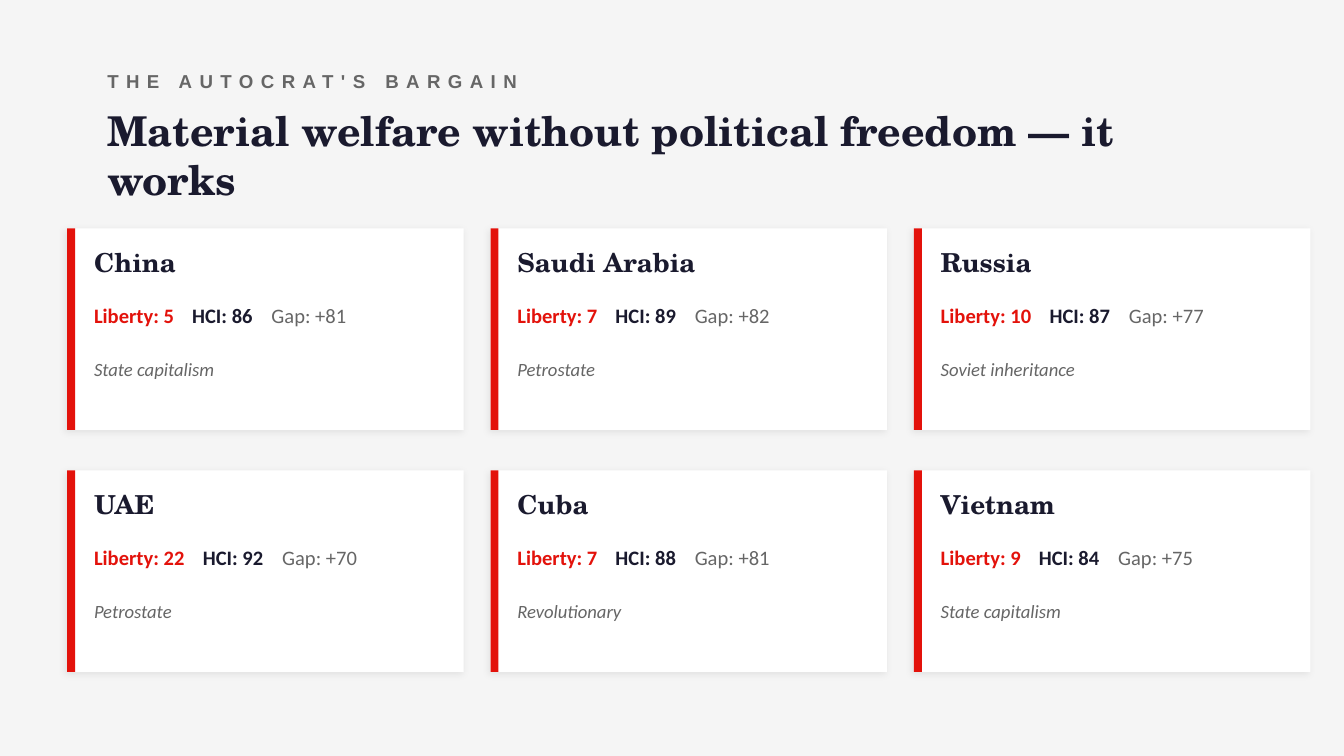
from typing import NamedTuple

from lxml import etree
from pptx import Presentation
from pptx.dml.color import RGBColor
from pptx.enum.shapes import MSO_SHAPE
from pptx.enum.text import MSO_ANCHOR
from pptx.oxml.ns import qn
from pptx.shapes.autoshape import Shape
from pptx.slide import Slide
from pptx.util import Inches, Pt

RECT = MSO_SHAPE.RECTANGLE
MIDDLE = MSO_ANCHOR.MIDDLE

COLORS = {
    "back": "F5F5F5",
    "card": "FFFFFF",
    "red": "E3120B",
    "navy": "1A1A2E",
    "gray": "666666",
    "shadow": "000000",
}
SERIF, SANS = "TeX Gyre Schola", "Calibri"
STYLES = {
    "label": ("gray", {"name": "Arial", "size": Pt(10), "bold": True}),
    "title": ("navy", {"name": SERIF, "size": Pt(22), "bold": True}),
    "nation": ("navy", {"name": SERIF, "size": Pt(14), "bold": True}),
    "liberty": ("red", {"name": SANS, "size": Pt(11), "bold": True}),
    "index": ("navy", {"name": SANS, "size": Pt(11), "bold": True}),
    "gap": ("gray", {"name": SANS, "size": Pt(11), "bold": False}),
    "model": ("gray", {"name": SANS, "size": Pt(10), "italic": True}),
}
MARGINS = ("margin_left", "margin_top", "margin_right", "margin_bottom")
WIDTH = Inches(10)
HEIGHT = WIDTH * 9 // 16
COLS = 3
LEFT, TOP = 0.5, 1.7
STEP_X, STEP_Y = 3.15, 1.8
CARD_W, CARD_H, BAR_W = 2.95, 1.5, 0.06


class Box(NamedTuple):
    left: float
    top: float
    width: float
    height: float


class Card(NamedTuple):
    nation: str
    liberty: int
    index: int
    model: str


CARDS = [
    Card("China", 5, 86, "State capitalism"),
    Card("Saudi Arabia", 7, 89, "Petrostate"),
    Card("Russia", 10, 87, "Soviet inheritance"),
    Card("UAE", 22, 92, "Petrostate"),
    Card("Cuba", 7, 88, "Revolutionary"),
    Card("Vietnam", 9, 84, "State capitalism"),
]


def color(name: str) -> RGBColor:
    return RGBColor.from_string(COLORS[name])


def add_rect(slide: Slide, box: Box, fill: str) -> Shape:
    shape = slide.shapes.add_shape(RECT, *map(Inches, box))
    shape.shadow.inherit = False
    shape.fill.solid()
    shape.fill.fore_color.rgb = color(fill)
    shape.line.fill.background()
    return shape


def add_shadow(shape: Shape) -> None:
    effects = shape._element.spPr.find(qn("a:effectLst"))
    outer = etree.SubElement(effects, qn("a:outerShdw"), blurRad=str(Pt(4)),
                             dist=str(Pt(1.5)), dir=str(135 * 60000),
                             algn="bl", rotWithShape="0")
    tint = etree.SubElement(outer, qn("a:srgbClr"), val=COLORS["shadow"])
    etree.SubElement(tint, qn("a:alpha"), val="8000")


def add_text(slide: Slide, box: Box, runs: list[tuple[str, str]],
             inset: bool = False, tabs: tuple[float, ...] = (),
             spacing: int = 0) -> None:
    frame = slide.shapes.add_textbox(*map(Inches, box)).text_frame
    frame.word_wrap = True
    frame.vertical_anchor = MIDDLE
    if not inset:
        for side in MARGINS:
            setattr(frame, side, 0)
    para = frame.paragraphs[0]
    if tabs:
        stops = etree.SubElement(para._p.get_or_add_pPr(), qn("a:tabLst"))
        for tab in tabs:
            etree.SubElement(stops, qn("a:tab"), pos=str(Inches(tab)), algn="l")
    for text, style in runs:
        run = para.add_run()
        run.text = text
        tint, values = STYLES[style]
        for name, value in values.items():
            setattr(run.font, name, value)
        run.font.color.rgb = color(tint)
        if spacing:
            run._r.get_or_add_rPr().set("spc", str(spacing * 100))


def add_card(slide: Slide, card: Card, left: float, top: float) -> None:
    add_shadow(add_rect(slide, Box(left, top, CARD_W, CARD_H), "card"))
    add_rect(slide, Box(left, top, BAR_W, CARD_H), "red")
    scores = [
        (f"Liberty: {card.liberty}", "liberty"),
        (f"\tHCI: {card.index}", "index"),
        (f"\tGap: +{card.index - card.liberty}", "gap"),
    ]
    first = 0.65 + 0.08 * len(str(card.liberty))
    rows = [
        ([(card.nation, "nation")], ()),
        (scores, (first, first + 0.59)),
        ([(card.model, "model")], ()),
    ]
    for row, (runs, tabs) in enumerate(rows):
        box = Box(left + 0.2, top + 0.1 + 0.4 * row, 2.6, 0.3)
        add_text(slide, box, runs, tabs=tabs)


def main() -> None:
    """Build the slide of six country cards."""
    deck = Presentation()
    deck.slide_width, deck.slide_height = WIDTH, HEIGHT
    slide = deck.slides.add_slide(deck.slide_layouts[6])
    slide.background.fill.solid()
    slide.background.fill.fore_color.rgb = color("back")
    add_text(slide, Box(0.7, 0.4, 8, 0.4),
             [("THE AUTOCRAT'S BARGAIN", "label")], inset=True, spacing=4)
    add_text(slide, Box(0.7, 0.9, 8.5, 0.5),
             [("Material welfare without political freedom — it works", "title")],
             inset=True)
    for place, card in enumerate(CARDS):
        row, col = divmod(place, COLS)
        add_card(slide, card, LEFT + col * STEP_X, TOP + row * STEP_Y)
    deck.save("out.pptx")


if __name__ == "__main__":
    main()
